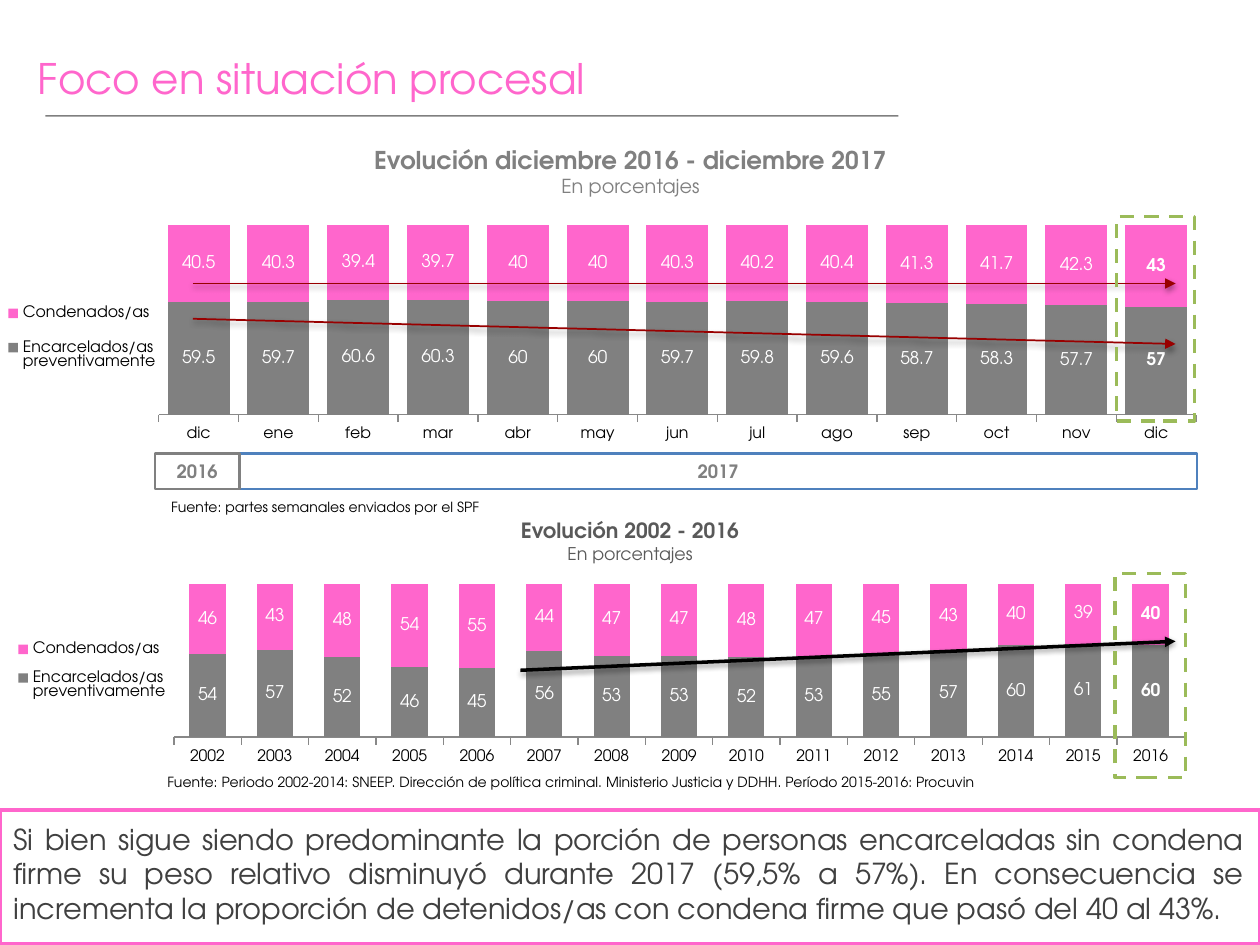
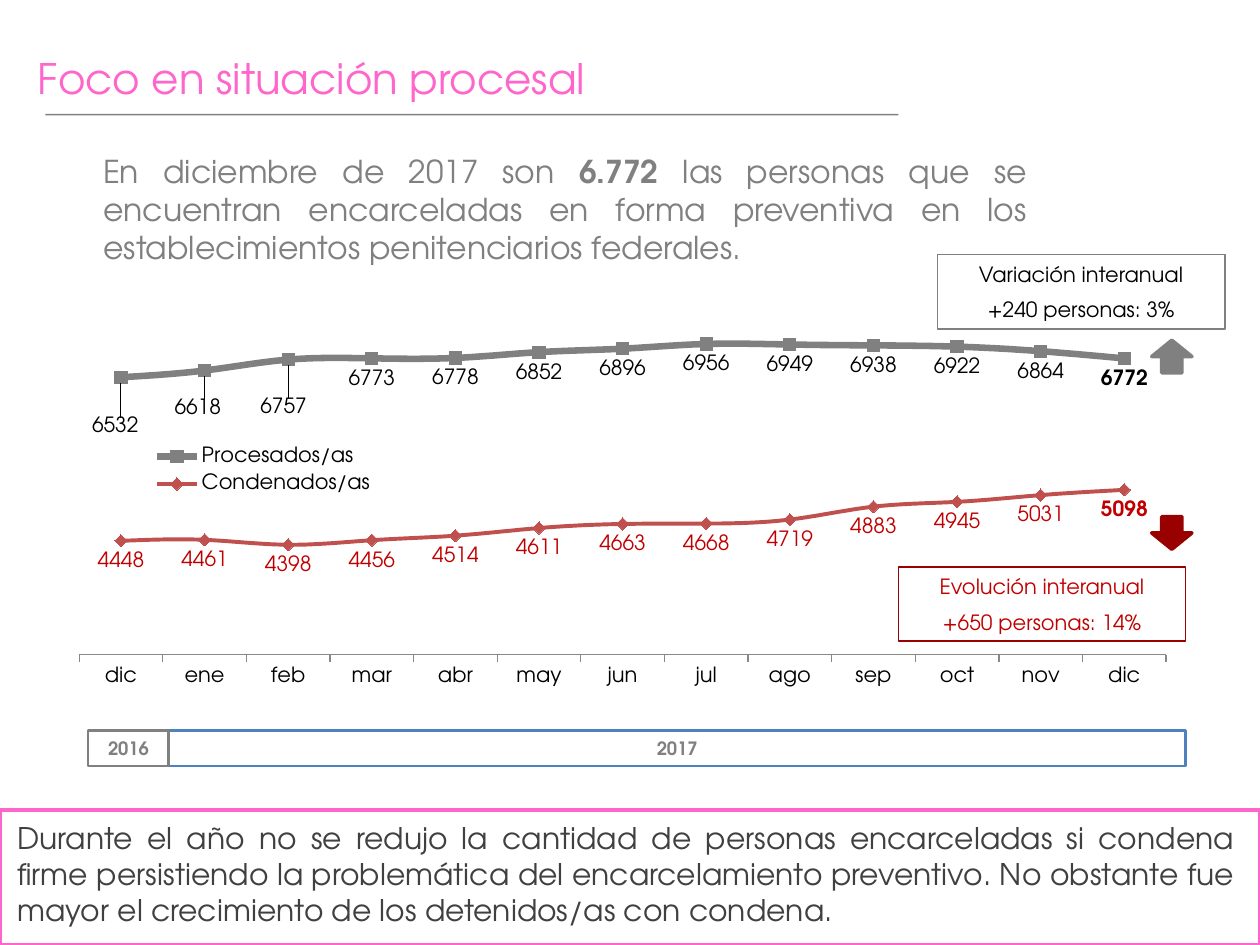
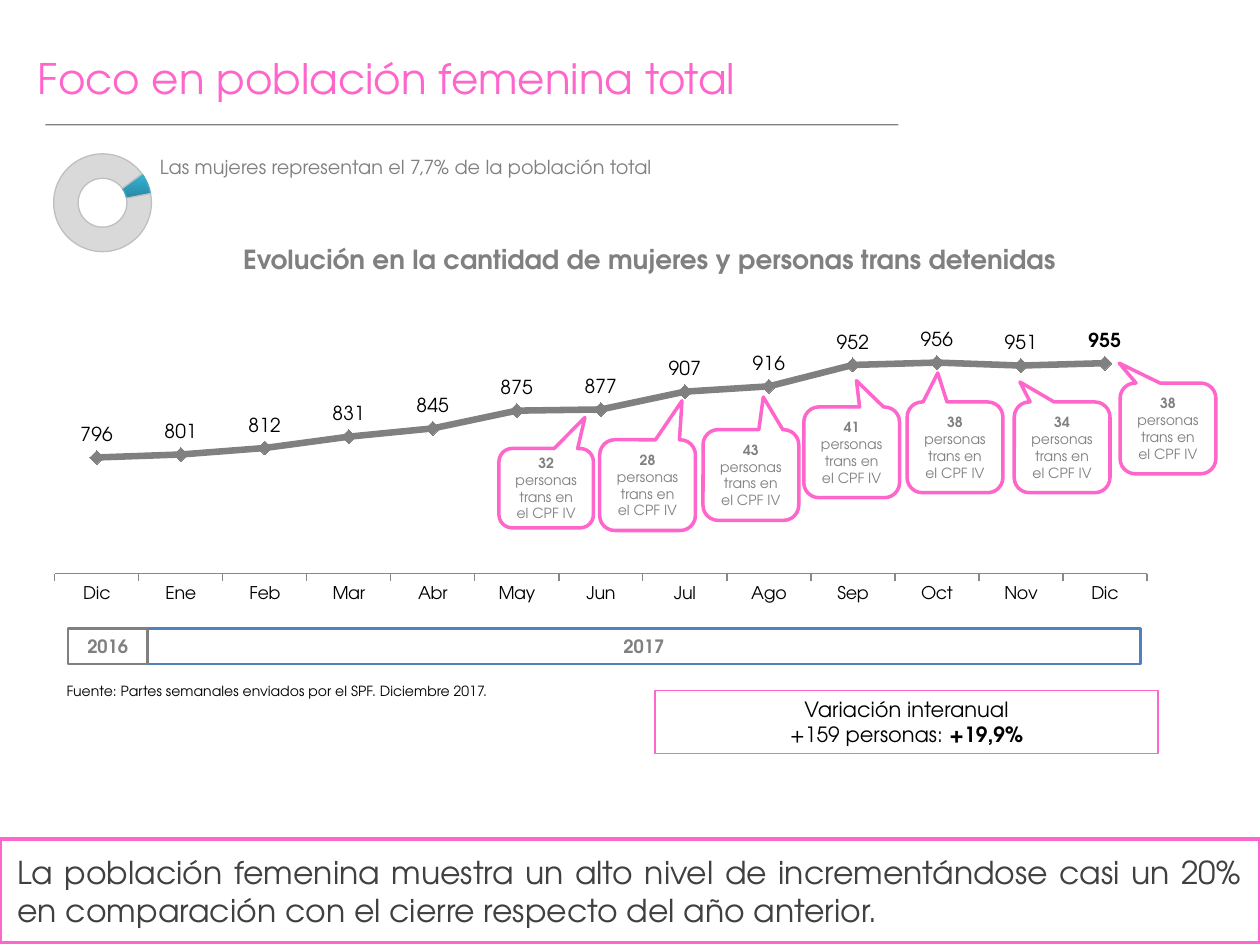
from dataclasses import dataclass

from lxml import etree
from pptx import Presentation
from pptx.chart.data import CategoryChartData
from pptx.dml.color import RGBColor
from pptx.enum.chart import (XL_CHART_TYPE, XL_LABEL_POSITION, XL_LEGEND_POSITION,
                             XL_MARKER_STYLE, XL_TICK_MARK)
from pptx.enum.dml import MSO_LINE
from pptx.enum.shapes import MSO_CONNECTOR, MSO_SHAPE
from pptx.enum.text import MSO_ANCHOR, MSO_AUTO_SIZE, PP_ALIGN
from pptx.oxml.ns import qn
from pptx.util import Inches, Pt

STACKED, LINES = XL_CHART_TYPE.COLUMN_STACKED_100, XL_CHART_TYPE.LINE_MARKERS
DOUGHNUT = XL_CHART_TYPE.DOUGHNUT
ABOVE, BELOW = XL_LABEL_POSITION.ABOVE, XL_LABEL_POSITION.BELOW
SQUARE, DIAMOND = XL_MARKER_STYLE.SQUARE, XL_MARKER_STYLE.DIAMOND
RECTANGLE, ARROW = MSO_SHAPE.RECTANGLE, MSO_SHAPE.RIGHT_ARROW
CALLOUT = MSO_SHAPE.ROUNDED_RECTANGULAR_CALLOUT
LEFT, CENTER, JUSTIFY = PP_ALIGN.LEFT, PP_ALIGN.CENTER, PP_ALIGN.JUSTIFY
TOP, MIDDLE = MSO_ANCHOR.TOP, MSO_ANCHOR.MIDDLE


@dataclass(frozen=True)
class Theme:
    font: str = "TeX Gyre Adventor"
    pink: str = "FF66CC"
    gray: str = "808080"
    dark: str = "404040"
    subtitle: str = "595959"
    axis: str = "888888"
    black: str = "000000"
    white: str = "FFFFFF"
    red: str = "C00000"
    dark_red: str = "990000"
    line_red: str = "C0504D"
    blue: str = "4F81BD"
    green: str = "9BBB59"
    teal: str = "2A88A2"
    cyan: str = "34B4D6"
    teal_line: str = "46AAC5"
    ring: str = "D9D9D9"
    ring_line: str = "BFBFBF"
    title_size: float = 24
    source_size: float = 8
    year_size: float = 10.5
    box_size: float = 12


THEME = Theme()
MONTHS = "dic ene feb mar abr may jun jul ago sep oct nov dic".split()
CONVICTED = "Condenados/as"
PREVENTIVE = "Encarcelados/as preventivamente"


def rgb(code):
    return RGBColor.from_string(code)


def set_font(font, size, color, bold=None):
    font.name, font.size, font.bold = THEME.font, Pt(size), bold
    font.color.rgb = rgb(color)


# Text: each paragraph is (runs, size, bold); bold runs start with "*"
def write(frame, paragraphs, color, align=LEFT, anchor=TOP, wrap=True, gap=0):
    frame.word_wrap, frame.auto_size = wrap, MSO_AUTO_SIZE.NONE
    frame.vertical_anchor = anchor
    for i, (runs, size, bold) in enumerate(paragraphs):
        paragraph = frame.add_paragraph() if i else frame.paragraphs[0]
        paragraph.alignment = align
        if i and gap:
            paragraph.space_before = Pt(gap)
        set_font(paragraph.font, size, color, bold)
        for text in runs:
            run = paragraph.add_run()
            run.text = text.removeprefix("*")
            if text.startswith("*"):
                run.font.bold = True


def add_text(slide, box, paragraphs, color, **options):
    label = slide.shapes.add_textbox(*map(Inches, box))
    write(label.text_frame, paragraphs, color, **options)


def add_outline(slide, box, color, width=2, kind=RECTANGLE, fill=None, dash=None):
    shape = slide.shapes.add_shape(kind, *map(Inches, box))
    shape.shadow.inherit = False
    if fill:
        shape.fill.solid()
        shape.fill.fore_color.rgb = rgb(fill)
    else:
        shape.fill.background()
    shape.line.color.rgb = rgb(color)
    shape.line.width = Pt(width)
    if dash:
        shape.line.dash_style = dash
    return shape


def add_line(slide, start, end, color, width, alpha=None, arrow=False):
    line = slide.shapes.add_connector(
        MSO_CONNECTOR.STRAIGHT, *map(Inches, (*start, *end)))
    line.line.color.rgb = rgb(color)
    line.line.width = Pt(width)
    properties = line.line._get_or_add_ln()
    if alpha:
        tint = properties.find(".//" + qn("a:srgbClr"))
        etree.SubElement(tint, qn("a:alpha"), val=str(alpha * 1000))
    effects = etree.SubElement(line._element.spPr, qn("a:effectLst"))
    if arrow:
        etree.SubElement(properties, qn("a:tailEnd"), type="triangle")
        shadow = etree.SubElement(effects, qn("a:outerShdw"), blurRad=str(Pt(3.1)),
                                  dist=str(Pt(1.6)), dir="5400000", rotWithShape="0")
        tint = etree.SubElement(shadow, qn("a:srgbClr"), val=THEME.black)
        etree.SubElement(tint, qn("a:alpha"), val="38000")


# Parts shared by the slides
def add_titled_slide(deck, title, rule_top):
    slide = deck.slides.add_slide(deck.slide_layouts[5])
    heading = slide.shapes.title
    heading.left, heading.top, heading.width, heading.height = map(
        Inches, (0.2, 0.37, 7.4, 0.62))
    write(heading.text_frame, [([title], THEME.title_size, False)], THEME.pink)
    add_line(slide, (0.36, rule_top), (7.13, rule_top), THEME.black, 0.75, alpha=50)
    return slide


def add_conclusion(slide, top, height, text_box, text, size):
    add_outline(slide, (0, top, 10, height), THEME.pink)
    add_text(slide, text_box, [([text], size, False)], THEME.dark, align=JUSTIFY)


def add_year_bar(slide, left, split, right, top):
    for year, start, end, color in (("2017", split, right, THEME.blue),
                                    ("2016", left, split, THEME.gray)):
        bar = add_outline(slide, (start, top, end - start, 0.28), color, 1.5)
        write(bar.text_frame, [([year], THEME.year_size, True)], THEME.gray,
              align=CENTER, anchor=MIDDLE)


def add_source(slide, box, text, wrap=False):
    add_text(slide, box, [([text], THEME.source_size, False)], THEME.black, wrap=wrap)


def add_variation(slide, box, line_color, text_color, heading, change, gap=0, fill=None):
    frame = add_outline(slide, box, line_color, 1, fill=fill)
    write(frame.text_frame,
          [([heading], THEME.box_size, None), (change, THEME.box_size, None)],
          text_color, align=CENTER, anchor=MIDDLE, gap=gap)


# Charts
def set_layout(parent, index, values, target=None, edge=True):
    for old in parent.findall(qn("c:layout")):
        parent.remove(old)
    layout = etree.Element(qn("c:layout"))
    manual = etree.SubElement(layout, qn("c:manualLayout"))
    if target:
        etree.SubElement(manual, qn("c:layoutTarget"), val=target)
    if edge:
        for mode in ("xMode", "yMode"):
            etree.SubElement(manual, qn("c:" + mode), val="edge")
    for key, value in zip("xywh", values):
        etree.SubElement(manual, qn("c:" + key), val=str(value))
    parent.insert(index, layout)


def add_base_chart(slide, kind, box, categories, series, plot_area):
    data = CategoryChartData()
    data.categories = categories
    for name, values in series:
        data.add_series(name, values)
    chart = slide.shapes.add_chart(kind, *map(Inches, box), data).chart
    chart.has_title = chart.has_legend = False
    set_layout(chart._chartSpace.chart.plotArea, 0, plot_area, target="inner")
    return chart


def add_axis_chart(slide, kind, box, categories, series, plot_area, size,
                   limits=None, legend=None):
    chart = add_base_chart(slide, kind, box, categories, series, plot_area)
    set_font(chart.font, size, THEME.black)
    chart.plots[0].vary_by_categories = False
    months = chart.category_axis
    months.major_tick_mark, months.minor_tick_mark = XL_TICK_MARK.OUTSIDE, XL_TICK_MARK.NONE
    months.has_major_gridlines = False
    months.format.line.color.rgb = rgb(THEME.axis)
    months.format.line.width = Pt(0.75)
    set_font(months.tick_labels.font, size, THEME.black)
    amounts = chart.value_axis
    amounts.has_major_gridlines = amounts.visible = False
    if limits:
        amounts.minimum_scale, amounts.maximum_scale = limits
    if legend:
        chart.has_legend = True
        chart.legend.position = XL_LEGEND_POSITION.RIGHT
        chart.legend.include_in_layout = False
        set_font(chart.legend.font, size, THEME.black)
        set_layout(chart.legend._element, 1, legend)
    return chart


def label_series(series, size, color, position=None):
    last = series.points[len(tuple(series.values)) - 1].data_label
    set_font(last.font, size, color, True)
    labels = series.data_labels
    labels.show_value = True
    set_font(labels.font, size, color)
    if position is not None:
        last.position = labels.position = position


def add_stacked_chart(slide, box, categories, preventive, convicted, plot_area, gap, legend):
    chart = add_axis_chart(slide, STACKED, box, categories,
                           [(PREVENTIVE, preventive), (CONVICTED, convicted)],
                           plot_area, 9, legend=legend)
    chart.plots[0].gap_width, chart.plots[0].overlap = gap, 100
    for series, color in zip(chart.plots[0].series, (THEME.gray, THEME.pink)):
        series.format.fill.solid()
        series.format.fill.fore_color.rgb = rgb(color)
        label_series(series, 10, THEME.white)


def style_line(series, color, width, marker, marker_size, smooth):
    series.smooth = smooth
    series.format.line.color.rgb = rgb(color)
    series.format.line.width = Pt(width)
    series.marker.style, series.marker.size = marker, marker_size
    series.marker.format.fill.solid()
    series.marker.format.fill.fore_color.rgb = rgb(color)
    series.marker.format.line.color.rgb = rgb(color)


def add_share_ring(slide):
    chart = add_base_chart(slide, DOUGHNUT, (0, 1.07, 1.85, 1.08), ["1", "2"],
                           [("Series 1", (7, 93))], (0.23, 0.14, 0.42, 0.72))
    chart._chartSpace.find(".//" + qn("c:firstSliceAng")).set("val", "54")
    women, rest = (chart.plots[0].series[0].points[i].format for i in range(2))
    women.fill.gradient()
    women.fill.gradient_angle = 90
    for stop, color in zip(women.fill.gradient_stops, (THEME.teal, THEME.cyan)):
        stop.color.rgb = rgb(color)
    rest.fill.solid()
    rest.fill.fore_color.rgb = rgb(THEME.ring)
    for part, color in ((women, THEME.teal_line), (rest, THEME.ring_line)):
        part.line.color.rgb = rgb(color)
        part.line.width = Pt(0.75)


# Slides
def build_shares(deck):
    slide = add_titled_slide(deck, "Foco en situación procesal", 0.92)
    yearly = (54, 57, 52, 46, 45, 56, 53, 53, 52, 53, 55, 57, 60, 61, 60)
    add_stacked_chart(slide, (0.04, 4.28, 9.57, 1.9), [str(y) for y in range(2002, 2017)],
                      yearly, [100 - share for share in yearly],
                      (0.14, 0.186, 0.838, 0.641), 86, (0.008, 0.37, 0.128, 0.36))
    monthly = (59.5, 59.7, 60.6, 60.3, 60, 60, 59.7, 59.8, 59.6, 58.7, 58.3, 57.7, 57)
    add_stacked_chart(slide, (0.04, 1.62, 9.53, 2.04), MONTHS,
                      monthly, [round(100 - share, 1) for share in monthly],
                      (0.128, 0.082, 0.864, 0.738), 29, (0, 0.32, 0.128, 0.4))

    add_text(slide, (2.72, 1.1, 4.57, 0.52),
             [(["Evolución diciembre 2016 - diciembre 2017"], 14, True),
              (["En porcentajes"], 11, False)], THEME.gray, align=CENTER)
    add_text(slide, (3.74, 4.06, 2.52, 0.47),
             [(["Evolución 2002 - 2016"], 12, True), (["En porcentajes"], 10, False)],
             THEME.subtitle, align=CENTER)
    add_source(slide, (1.26, 3.91, 2.68, 0.24), "Fuente: partes semanales enviados por el SPF")
    add_source(slide, (1.23, 6.09, 6.63, 0.24),
               "Fuente: Periodo 2002-2014: SNEEP. Dirección de política criminal. "
               "Ministerio Justicia y DDHH. Período 2015-2016: Procuvin")

    # Trends and highlighted last columns
    add_line(slide, (4.13, 5.32), (9.33, 5.09), THEME.black, 2, arrow=True)
    for start, end in ((2.53, 2.73), (2.25, 2.25)):
        add_line(slide, (1.53, start), (9.33, end), THEME.dark_red, 1, arrow=True)
    for highlight in ((8.86, 1.72, 0.62, 1.62), (8.85, 4.55, 0.56, 1.62)):
        add_outline(slide, highlight, THEME.green, dash=MSO_LINE.DASH)
    add_year_bar(slide, 1.23, 1.9, 9.5, 3.6)
    add_conclusion(slide, 6.43, 1.06, (0.01, 6.47, 9.96, 0.93),
                   "Si bien sigue siendo predominante la porción de personas encarceladas sin "
                   "condena firme su peso relativo disminuyó durante 2017 (59,5% a 57%). En "
                   "consecuencia se incrementa la proporción de detenidos/as con condena firme "
                   "que pasó del 40 al 43%.", 16.5)


def build_counts(deck):
    slide = add_titled_slide(deck, "Foco en situación procesal", 0.91)
    add_text(slide, (0.72, 1.16, 7.53, 1.01),
             [(["En diciembre de 2017 son ", "*6.772",
                " las personas que se encuentran encarceladas en forma preventiva en los "
                "establecimientos penitenciarios federales."], 18, None)],
             THEME.gray, align=JUSTIFY)
    chart = add_axis_chart(
        slide, LINES, (0.32, 2.08, 9.09, 3.8), MONTHS,
        [("Procesados/as", (6532, 6618, 6757, 6773, 6778, 6852, 6896, 6956, 6949, 6938,
                            6922, 6864, 6772)),
         (CONVICTED, (4448, 4461, 4398, 4456, 4514, 4611, 4663, 4668, 4719, 4883,
                      4945, 5031, 5098))],
        (0.034, 0, 0.949, 0.82), 12, limits=(3000, 8000), legend=(0.1, 0.37, 0.19, 0.13))
    accused, convicted = chart.plots[0].series
    style_line(accused, THEME.gray, 3.75, SQUARE, 7, True)
    style_line(convicted, THEME.line_red, 2.25, DIAMOND, 7, True)
    label_series(accused, 12, THEME.black, BELOW)
    label_series(convicted, 12, THEME.red, BELOW)
    for i, offset in enumerate(((-0.005, 0.06), (-0.006, 0.035), (-0.004, 0.057))):
        label = accused.points[i].data_label
        set_font(label.font, 12, THEME.black)
        label.position = BELOW
        set_layout(label._dLbl, 1, offset, edge=False)

    add_year_bar(slide, 0.7, 1.34, 9.41, 5.8)
    add_variation(slide, (7.44, 2.02, 2.28, 0.59), THEME.gray, THEME.black,
                  "Variación interanual", ["+240 personas: 3%"], gap=6)
    add_variation(slide, (7.13, 4.5, 2.28, 0.59), THEME.dark_red, THEME.red,
                  "Evolución interanual", ["+650 personas: 14%"], gap=6)
    for top, turn, color in ((2.67, 270, THEME.gray), (4.07, 90, THEME.dark_red)):
        arrow = add_outline(slide, (9.17, top, 0.26, 0.32), color, kind=ARROW, fill=color)
        arrow.rotation = turn
    add_conclusion(slide, 6.43, 1.07, (0.04, 6.46, 9.86, 0.96),
                   "Durante el año no se redujo la cantidad de personas encarceladas si condena "
                   "firme persistiendo la problemática del encarcelamiento preventivo. No "
                   "obstante fue mayor el crecimiento de los detenidos/as con condena.", 17)


def build_women(deck):
    slide = add_titled_slide(deck, "Foco en población femenina total", 0.99)
    chart = add_axis_chart(
        slide, LINES, (0.43, 2.45, 8.96, 3.35), [month.capitalize() for month in MONTHS],
        [("Series 1", (796, 801, 812, 831, 845, 875, 877, 907, 916, 952, 956, 951, 955))],
        (0, 0.066, 0.968, 0.562), 10, limits=(600, 1000))
    women = chart.plots[0].series[0]
    style_line(women, THEME.gray, 3.75, DIAMOND, 8, False)
    label_series(women, 11, THEME.black, ABOVE)
    add_share_ring(slide)

    add_text(slide, (1.77, 1.88, 6.77, 0.35),
             [(["Evolución en la cantidad de mujeres y personas trans detenidas"], 15, True)],
             THEME.gray, align=CENTER)
    add_text(slide, (1.17, 1.18, 4.78, 0.29),
             [(["Las mujeres representan el 7,7% de la población total"], 11, False)],
             THEME.gray)
    add_source(slide, (0.43, 5.37, 4.07, 0.24),
               "Fuente: Partes semanales enviados por el SPF. Diciembre 2017.", wrap=True)
    add_year_bar(slide, 0.54, 1.17, 9.05, 4.99)

    # Trans people held, from June to December
    for count, box, tip in (
            (32, (3.96, 3.56, 0.75, 0.63), (0.41, -0.89)),
            (28, (4.76, 3.49, 0.76, 0.72), (0.36, -0.93)),
            (43, (5.58, 3.41, 0.76, 0.72), (0.13, -0.86)),
            (41, (6.38, 3.23, 0.76, 0.72), (0.05, -0.79)),
            (38, (7.2, 3.19, 0.76, 0.72), (-0.18, -0.82)),
            (34, (8.05, 3.19, 0.76, 0.72), (-0.44, -0.72)),
            (38, (8.89, 3.04, 0.76, 0.72), (-0.51, -0.72))):
        callout = add_outline(slide, box, THEME.pink, kind=CALLOUT)
        callout.adjustments[0], callout.adjustments[1] = tip
        write(callout.text_frame, [([f"*{count} ", "personas trans en el CPF IV"], 8, None)],
              THEME.gray, align=CENTER, anchor=MIDDLE)

    add_variation(slide, (5.2, 5.48, 3.99, 0.5), THEME.pink, THEME.black,
                  "Variación interanual", ["+159 personas: ", "*+19,9%"], fill=THEME.white)
    add_conclusion(slide, 6.66, 0.82, (0.04, 6.72, 9.91, 0.71),
                   "La población femenina muestra un alto nivel de incrementándose casi un 20% "
                   "en comparación con el cierre respecto del año anterior.", 18)


def main():
    deck = Presentation()
    deck.slide_width, deck.slide_height = Inches(10), Inches(7.5)
    build_shares(deck)
    build_counts(deck)
    build_women(deck)
    deck.save("out.pptx")


if __name__ == "__main__":
    main()
